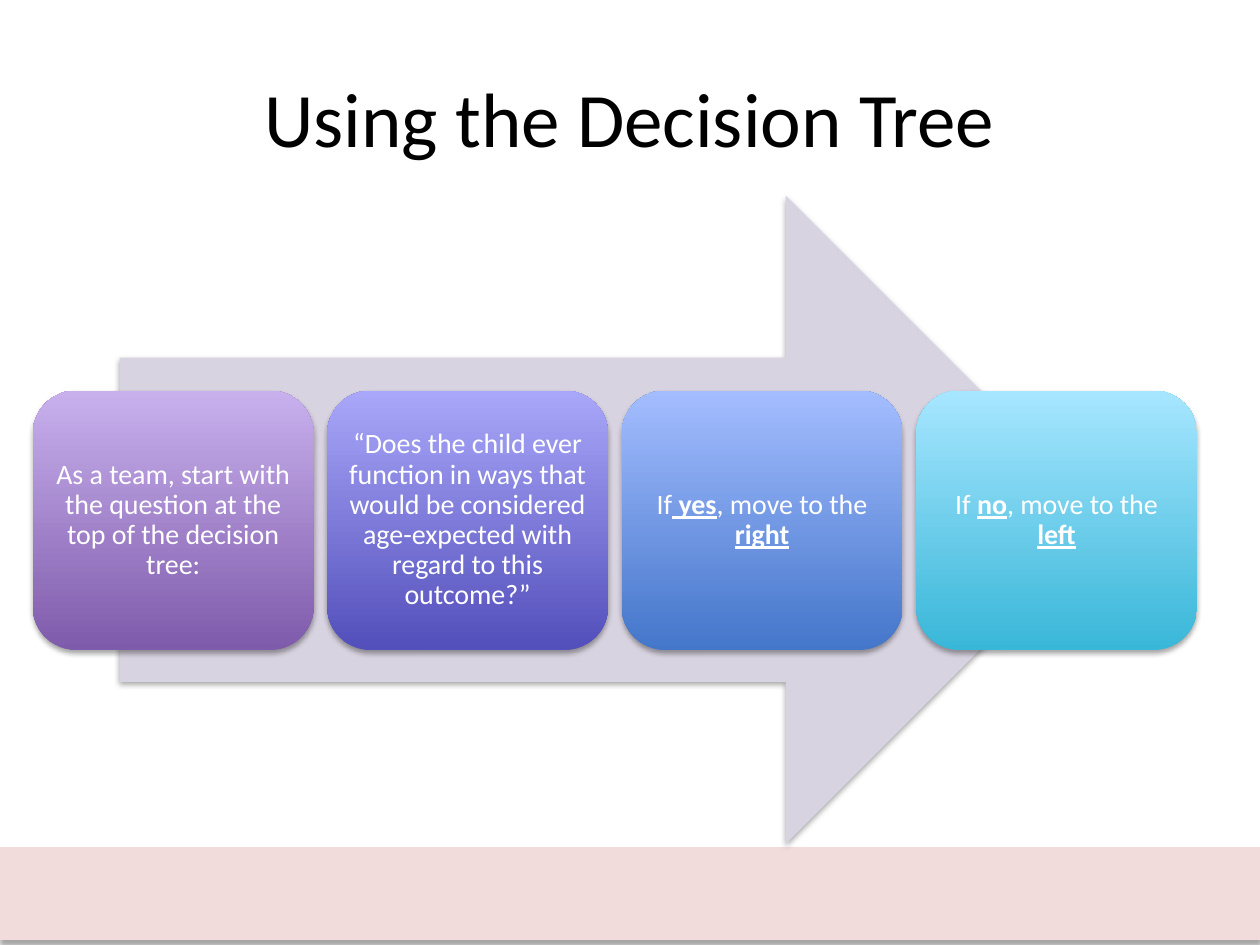
from dataclasses import dataclass

import lxml.etree
import pptx
import pptx.dml.color
import pptx.enum.shapes
import pptx.enum.text
import pptx.oxml.ns
import pptx.util

WIDTH = pptx.util.Inches(10)
HEIGHT = pptx.util.Inches(7.5)
FONT = "Calibri"
SHAPES = pptx.enum.shapes.MSO_SHAPE


@dataclass(frozen=True)
class Box:
    left: float
    top: float
    width: float
    height: float

    def emu(self) -> tuple[int, int, int, int]:
        return (
            int(self.left * WIDTH),
            int(self.top * HEIGHT),
            int(self.width * WIDTH),
            int(self.height * HEIGHT),
        )


@dataclass(frozen=True)
class Run:
    text: str
    bold: bool = False
    underline: bool = False


@dataclass(frozen=True)
class Card:
    bottom: str
    top: str
    runs: tuple[Run, ...]


FIRST_CARD = Box(0.026, 3.1 / 7.5, 0.223, 2.06 / 7.5)
CARD_STEP = 0.2337

CARDS = (
    Card("7F5BAB", "C8B0ED", (
        Run("As a team, start with the question at the top of the decision tree:"),
    )),
    Card("534FBB", "A9A7F9", (
        Run("“Does the child ever function in ways that would be considered "
            "age-expected with regard to this outcome?”"),
    )),
    Card("4476CA", "A4BDFF", (
        Run("If"),
        Run(" ", underline=True),
        Run("yes", bold=True, underline=True),
        Run(", move to the "),
        Run("right", bold=True, underline=True),
    )),
    Card("39B7D8", "A7E6FF", (
        Run("If "),
        Run("no", bold=True, underline=True),
        Run(", move to the "),
        Run("left", bold=True, underline=True),
    )),
)


def color(value: str) -> pptx.dml.color.RGBColor:
    return pptx.dml.color.RGBColor.from_string(value)


def add_shadow(s) -> None:
    s.shadow.inherit = False
    qn = pptx.oxml.ns.qn
    effects = s._element.spPr.find(qn("a:effectLst"))
    shadow = lxml.etree.SubElement(
        effects, qn("a:outerShdw"),
        blurRad=str(pptx.util.Pt(3.1)), dist=str(pptx.util.Pt(1.8)),
        dir="5400000", rotWithShape="0",
    )
    black = lxml.etree.SubElement(shadow, qn("a:srgbClr"), val="000000")
    lxml.etree.SubElement(black, qn("a:alpha"), val="35000")


def add_shape(slide, kind, box: Box, fill: str | None = None):
    s = slide.shapes.add_shape(kind, *box.emu())
    s.line.fill.background()
    if fill:
        s.fill.solid()
        s.fill.fore_color.rgb = color(fill)
    add_shadow(s)
    return s


def write_text(s, runs: tuple[Run, ...], size: float, ink: str,
               spacing: float = 1.0):
    tf = s.text_frame
    tf.word_wrap = True
    tf.vertical_anchor = pptx.enum.text.MSO_ANCHOR.MIDDLE
    p = tf.paragraphs[0]
    p.alignment = pptx.enum.text.PP_ALIGN.CENTER
    p.line_spacing = spacing
    for run in runs:
        r = p.add_run()
        r.text = run.text
        r.font.name = FONT
        r.font.size = pptx.util.Pt(size)
        r.font.bold = run.bold
        r.font.underline = run.underline
        r.font.color.rgb = color(ink)
    return tf


def add_card(slide, card: Card, column: int) -> None:
    box = Box(FIRST_CARD.left + column * CARD_STEP, FIRST_CARD.top,
              FIRST_CARD.width, FIRST_CARD.height)
    s = add_shape(slide, SHAPES.ROUNDED_RECTANGLE, box)
    s.fill.gradient()
    s.fill.gradient_angle = 90
    for stop, value in zip(s.fill.gradient_stops, (card.bottom, card.top)):
        stop.color.rgb = color(value)
    tf = write_text(s, card.runs, 16, "FFFFFF", 0.9)
    margin = pptx.util.Inches(0.07)
    tf.margin_left = tf.margin_right = margin
    tf.margin_top = tf.margin_bottom = margin


def main() -> None:
    prs = pptx.Presentation()
    prs.slide_width = WIDTH
    prs.slide_height = HEIGHT
    slide = prs.slides.add_slide(prs.slide_layouts[6])

    band = add_shape(slide, SHAPES.RECTANGLE,
                     Box(0, 6.73 / 7.5, 1, 0.73 / 7.5), "F2DCDB")
    band.line.color.rgb = color("F2DCDB")
    band.line.width = pptx.util.Pt(0.75)

    title = slide.shapes.add_textbox(*Box(0.05, 0.04, 0.9, 1.25 / 7.5).emu())
    write_text(title, (Run("Using the Decision Tree"),), 44, "000000")

    add_shape(slide, SHAPES.RIGHT_ARROW,
              Box(0.095, 1.55 / 7.5, 0.786, 5.15 / 7.5), "D8D3E0")
    for column, card in enumerate(CARDS):
        add_card(slide, card, column)

    prs.save("out.pptx")


if __name__ == "__main__":
    main()
